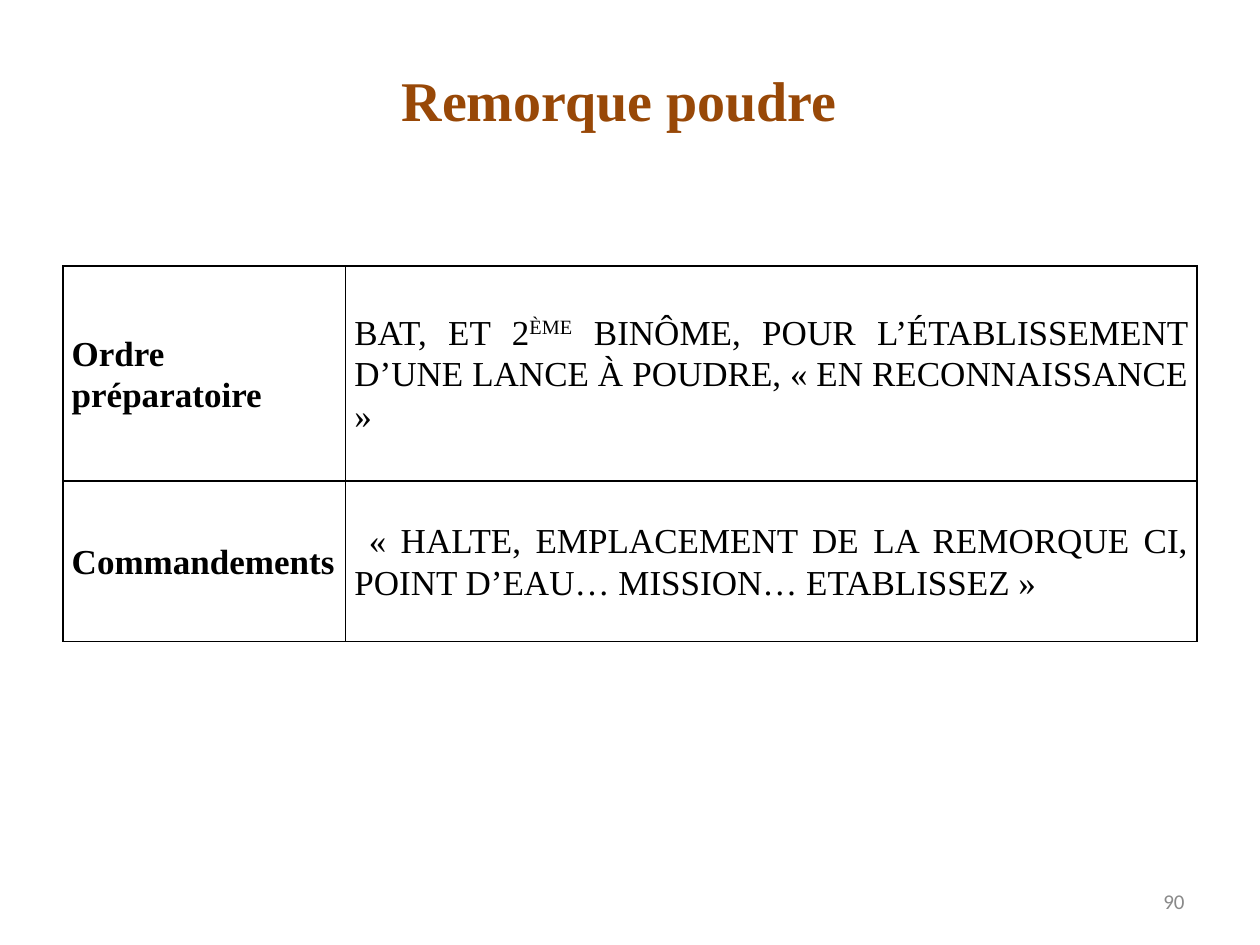
"""Build the slide on the powder trailer orders."""
from pptx import Presentation
from pptx.dml.color import RGBColor
from pptx.enum.text import MSO_ANCHOR as Anchor, PP_ALIGN as Align
from pptx.oxml import parse_xml
from pptx.oxml.ns import nsdecls
from pptx.util import Pt

ORDERS = [
    (
        [("Ordre préparatoire", 0)],
        [
            ("BAT, ET 2", 0),
            ("ÈME", 30),
            (" BINÔME, POUR L’ÉTABLISSEMENT D’UNE LANCE À POUDRE, « EN RECONNAISSANCE »", 0),
        ],
    ),
    (
        [("Commandements", 0)],
        [(" « HALTE, EMPLACEMENT DE LA REMORQUE CI, POINT D’EAU… MISSION… ETABLISSEZ »", 0)],
    ),
]


def color(value):
    return RGBColor.from_string(value)


def apply(target, values):
    for name, value in values.items():
        setattr(target, name, value)


class SlideBuilder:
    """Hold the style and the current slide."""

    serif = "Times New Roman"
    sans = "Calibri"
    border = "000000"
    cell_format = {
        "vertical_anchor": Anchor.MIDDLE,
        "margin_left": Pt(5),
        "margin_right": Pt(5),
        "margin_top": 0,
        "margin_bottom": 0,
    }
    cell_paragraph = {"alignment": Align.JUSTIFY, "line_spacing": 1.07, "space_after": Pt(8)}

    def __init__(self, presentation):
        self.slide = presentation.slides.add_slide(presentation.slide_layouts[5])

    def fill_paragraph(self, paragraph, parts, layout, font, ink):
        apply(paragraph, layout)
        for text, raised in parts:
            run = paragraph.add_run()
            run.text = text
            apply(run.font, font)
            run.font.color.rgb = color(ink)
            if raised:
                run.font._element.set("baseline", str(raised * 1000))

    def place(self, shape, box):
        apply(shape, dict(zip(("left", "top", "width", "height"), map(Pt, box))))
        apply(shape.text_frame, {"word_wrap": True, "vertical_anchor": Anchor.MIDDLE})

    def title(self, text, box):
        shape = self.slide.shapes.title
        self.place(shape, box)
        font = {"name": self.serif, "size": Pt(32), "bold": True}
        layout = {"alignment": Align.CENTER}
        self.fill_paragraph(shape.text_frame.paragraphs[0], [(text, 0)], layout, font, "984807")

    def page_number(self, text, box):
        shape = self.slide.shapes.add_textbox(*map(Pt, box))
        self.place(shape, box)
        font = {"name": self.sans, "size": Pt(12)}
        layout = {"alignment": Align.RIGHT}
        self.fill_paragraph(shape.text_frame.paragraphs[0], [(text, 0)], layout, font, "898989")

    def outline(self, cell):
        properties = cell._tc.get_or_add_tcPr()
        for side in "LRTB":
            properties.append(parse_xml(
                f'<a:ln{side} {nsdecls("a")} w="{int(Pt(1))}"><a:solidFill>'
                f'<a:srgbClr val="{self.border}"/></a:solidFill></a:ln{side}>'
            ))

    def table(self, rows, left, top, widths, heights):
        frame = self.slide.shapes.add_table(
            len(heights), len(widths), Pt(left), Pt(top), Pt(sum(widths)), Pt(sum(heights))
        )
        table = frame.table
        apply(table, {"first_row": False, "horz_banding": False})
        for column, width in zip(table.columns, widths):
            column.width = Pt(width)
        for row, height, contents in zip(table.rows, heights, rows):
            row.height = Pt(height)
            for index, (cell, parts) in enumerate(zip(row.cells, contents)):
                apply(cell, self.cell_format)
                self.outline(cell)
                cell.fill.background()
                font = {"name": self.serif, "size": Pt(20), "bold": index == 0}
                paragraph = cell.text_frame.paragraphs[0]
                self.fill_paragraph(paragraph, parts, self.cell_paragraph, font, "000000")


def main():
    presentation = Presentation()
    apply(presentation, {"slide_width": Pt(720), "slide_height": Pt(540)})
    builder = SlideBuilder(presentation)
    builder.title("Remorque poudre", (30, 20, 648, 73))
    builder.page_number("90", (516, 500.5, 168, 28.75))
    builder.table(ORDERS, 36, 152, (161.5, 486.5), (123, 91.5))
    presentation.save("out.pptx")


if __name__ == "__main__":
    main()
